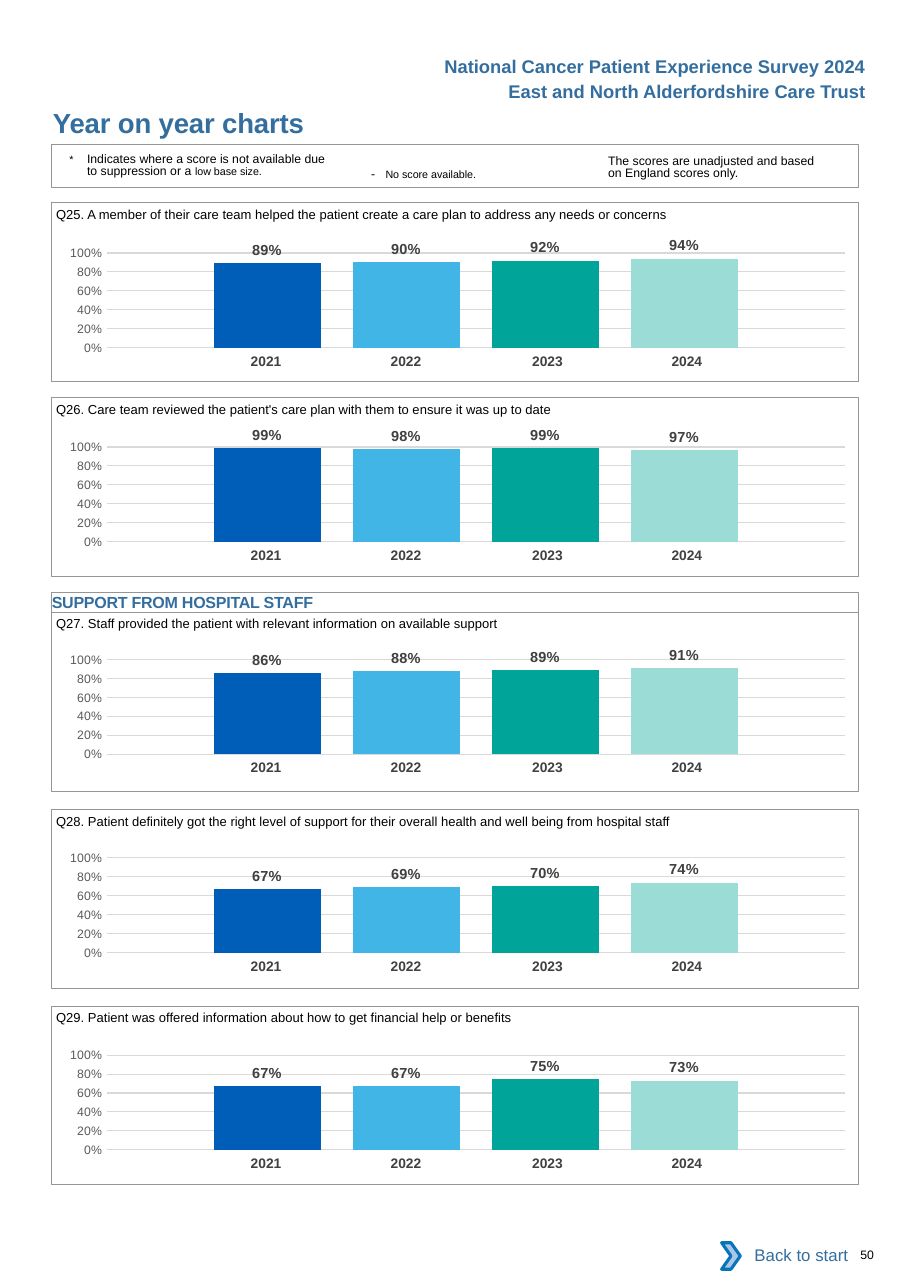
from dataclasses import dataclass

from pptx import Presentation
from pptx.chart.data import CategoryChartData
from pptx.dml.color import RGBColor
from pptx.enum.chart import XL_CHART_TYPE, XL_LABEL_POSITION, XL_TICK_MARK
from pptx.enum.shapes import MSO_SHAPE
from pptx.enum.text import MSO_ANCHOR, MSO_AUTO_SIZE, PP_ALIGN
from pptx.oxml import parse_xml
from pptx.oxml.ns import nsdecls
from pptx.util import Inches, Pt

COLS, ROWS = 82.6, 116.9  # grid of square cells, a tenth of an inch each
LEFT, WIDE, HIGH = 4.7, 73.2, 16.2  # panel frame
FONT = "Arial"
PLAIN_STYLE = "{2D5ABB26-0587-4C30-8999-92F81FD0307C}"
COLORS = {
    "ink": "000000", "brand": "336E9F", "frame": "939598", "grid": "D9D9D9",
    "axis": "595959", "value": "404040", "year": "414042",
    "arrow": "A8C7E9", "edge": "0A74BB",
}
BARS = ("005EB8", "41B6E6", "00A499", "9CDCD7")
# year, column width, right margin
YEARS = (("2021", 12.7, 0), ("2022", 12.7, 0), ("2023", 13.4, 0.4), ("2024", 12.7, 1.2))


@dataclass(frozen=True)
class Box:
    col: float
    row: float
    wide: float
    high: float

    def place(self) -> tuple[int, int, int, int]:
        return tuple(grid(n) for n in (self.col, self.row, self.wide, self.high))


@dataclass(frozen=True)
class Label:
    text: str
    box: Box
    size: float = 8
    color: str = "ink"
    bold: bool = False
    right: bool = False
    lead: float = 0  # fixed line height in points
    track: int = 0  # letter spacing in hundredths of a point
    tail: str = ""  # smaller closing words


@dataclass(frozen=True)
class Panel:
    text: str
    top: float
    chart: float
    scores: tuple[float, ...]


TITLE = Label("Year on year charts", Box(4.8, 9.6, 45, 3), 18, "brand", True, track=-10)
SECTION = Label("SUPPORT FROM HOSPITAL STAFF", Box(LEFT, 53.8, WIDE, 1.8), 10.5,
                "brand", True, track=-15)
LABELS = (
    Label("National Cancer Patient Experience Survey 2024",
          Box(33.6, 5, 45, 2), 12, "brand", True, True),
    Label("East and North Alderfordshire Care Trust",
          Box(33.6, 7.3, 45, 2), 12, "brand", True, True),
    Label("*", Box(6.3, 13.9, 1.2, 1.3), 7, lead=8.1),
    Label("Indicates where a score is not available due to suppression or a ",
          Box(7.9, 13.9, 22, 2.5), lead=8.1, tail="low base size."),
    Label("-", Box(33.7, 15.1, 1, 1.3)),
    Label("No score available.", Box(35, 15.2, 14, 1.3), 7),
    Label("The scores are unadjusted and based on England scores only.",
          Box(55.2, 14.1, 19.5, 2.5), lead=8.1),
    Label("Back to start", Box(66.5, 113, 10.5, 1.9), 11, "brand", right=True),
    Label("50", Box(78.1, 113.2, 4, 1.3)),
)
PANELS = (
    Panel("Q25. A member of their care team helped the patient create a care plan "
          "to address any needs or concerns", 18.4, 21.1, (0.89, 0.9, 0.92, 0.94)),
    Panel("Q26. Care team reviewed the patient's care plan with them to ensure it "
          "was up to date", 36.1, 38.7, (0.99, 0.98, 0.99, 0.97)),
    Panel("Q27. Staff provided the patient with relevant information on available "
          "support", 55.6, 58, (0.86, 0.88, 0.89, 0.91)),
    Panel("Q28. Patient definitely got the right level of support for their overall "
          "health and well being from hospital staff", 73.5, 76, (0.67, 0.69, 0.7, 0.74)),
    Panel("Q29. Patient was offered information about how to get financial help or "
          "benefits", 91.3, 93.9, (0.67, 0.67, 0.75, 0.73)),
)


def grid(cells: float) -> int:
    return Inches(cells / 10)


def tint(name: str) -> RGBColor:
    return RGBColor.from_string(COLORS.get(name, name))


def style(font, size: float, color: str, bold: bool = False) -> None:
    font.name, font.size, font.bold = FONT, Pt(size), bold
    font.color.rgb = tint(color)


def write(frame, label: Label) -> None:
    frame.margin_left = frame.margin_right = frame.margin_top = frame.margin_bottom = 0
    frame.word_wrap = True
    frame.auto_size = MSO_AUTO_SIZE.NONE
    frame.vertical_anchor = MSO_ANCHOR.TOP
    frame.text = label.text
    para = frame.paragraphs[0]
    para.alignment = PP_ALIGN.RIGHT if label.right else PP_ALIGN.LEFT
    if label.lead:
        para.line_spacing = Pt(label.lead)
    if label.tail:
        para.add_run().text = label.tail
    for run in para.runs:
        small = run.text == label.tail
        style(run.font, 7 if small else label.size, label.color, label.bold)
        if label.track:
            run._r.get_or_add_rPr().set("spc", str(label.track))


def add_label(slide, label: Label) -> None:
    write(slide.shapes.add_textbox(*label.box.place()).text_frame, label)


def add_frame(slide, box: Box, width: float = 0.5):
    rect = slide.shapes.add_shape(MSO_SHAPE.RECTANGLE, *box.place())
    rect.shadow.inherit = False
    rect.fill.background()
    rect.line.color.rgb = tint("frame")
    rect.line.width = Pt(width)
    return rect


def add_years(slide, row: float) -> None:
    box = Box(17.3, row, sum(wide for _, wide, _ in YEARS), 2.7)
    table = slide.shapes.add_table(1, len(YEARS), *box.place()).table
    table.first_row = table.horz_banding = False
    table._tbl.tblPr[0].text = PLAIN_STYLE
    table.rows[0].height = grid(box.high)
    for i, (year, wide, edge) in enumerate(YEARS):
        table.columns[i].width = grid(wide)
        cell = table.cell(0, i)
        cell.fill.background()
        cell.margin_left, cell.margin_right = grid(1), grid(edge)
        cell.margin_top = cell.margin_bottom = grid(0.5)
        cell.text_frame.text = year
        para = cell.text_frame.paragraphs[0]
        para.alignment = PP_ALIGN.CENTER
        style(para.runs[0].font, 9, "year", True)


def fix_plot(chart) -> None:
    """Pin the inner plot area to fixed shares of the chart."""
    area = chart._chartSpace.chart.plotArea
    for old in area.findall("{*}layout"):
        area.remove(old)
    shares = {"x": 0.079, "y": 0.145, "w": 0.915, "h": 0.666}
    modes = "".join(f'<c:{k}Mode val="edge"/>' for k in "xy")
    sizes = "".join(f'<c:{k} val="{v}"/>' for k, v in shares.items())
    area.insert(0, parse_xml(
        f'<c:layout {nsdecls("c")}><c:manualLayout><c:layoutTarget val="inner"/>'
        f"{modes}{sizes}</c:manualLayout></c:layout>"))


def add_bars(slide, row: float, scores: tuple[float, ...]) -> None:
    data = CategoryChartData(number_format="0%")
    data.categories = ["1"]
    for i, score in enumerate(scores, 1):
        data.add_series(f"Series {i}", [score])
    chart = slide.shapes.add_chart(
        XL_CHART_TYPE.COLUMN_CLUSTERED, *Box(3.9, row, WIDE, 12.9).place(), data).chart
    chart.has_legend = chart.has_title = False
    chart.font.name, chart.font.size = "Calibri", Pt(10)
    chart.font.color.rgb = tint("ink")
    chart.category_axis.visible = False
    axis = chart.value_axis
    axis.minimum_scale, axis.maximum_scale, axis.major_unit = 0, 1, 0.2
    axis.major_tick_mark = axis.minor_tick_mark = XL_TICK_MARK.NONE
    axis.format.line.fill.background()
    axis.major_gridlines.format.line.color.rgb = tint("grid")
    axis.major_gridlines.format.line.width = Pt(0.75)
    axis.tick_labels.number_format = "0%"
    axis.tick_labels.number_format_is_linked = False
    style(axis.tick_labels.font, 8, "axis")
    plot = chart.plots[0]
    plot.gap_width, plot.overlap, plot.vary_by_categories = 200, -30, False
    for series, color in zip(plot.series, BARS):
        series.format.fill.solid()
        series.format.fill.fore_color.rgb = tint(color)
        marks = series.data_labels
        marks.show_value = True
        marks.position = XL_LABEL_POSITION.OUTSIDE_END
        marks.number_format, marks.number_format_is_linked = "0%", False
        style(marks.font, 9.5, "value", True)
    fix_plot(chart)


def add_panel(slide, panel: Panel) -> None:
    add_years(slide, panel.chart + 10.5)
    add_bars(slide, panel.chart, panel.scores)
    add_frame(slide, Box(LEFT, panel.top, WIDE, HIGH))
    add_label(slide, Label(panel.text, Box(5.1, panel.top + 0.3, 72, 1.5), 8.5))


def add_arrow(slide) -> None:
    arrow = slide.shapes.add_shape(MSO_SHAPE.CHEVRON, *Box(65.5, 112.8, 1.7, 2.4).place())
    arrow.shadow.inherit = False
    arrow.fill.solid()
    arrow.fill.fore_color.rgb = tint("arrow")
    arrow.line.color.rgb = tint("edge")
    arrow.line.width = Pt(2)


def main() -> None:
    deck = Presentation()
    deck.slide_width, deck.slide_height = grid(COLS), grid(ROWS)
    slide = deck.slides.add_slide(deck.slide_layouts[5])
    title = slide.shapes.title
    title.left, title.top, title.width, title.height = TITLE.box.place()
    write(title.text_frame, TITLE)
    for panel in PANELS:
        add_panel(slide, panel)
    write(add_frame(slide, SECTION.box).text_frame, SECTION)
    add_frame(slide, Box(LEFT, 13.1, WIDE, 3.9), 0.75)
    for label in LABELS:
        add_label(slide, label)
    add_arrow(slide)
    deck.save("out.pptx")


if __name__ == "__main__":
    main()
